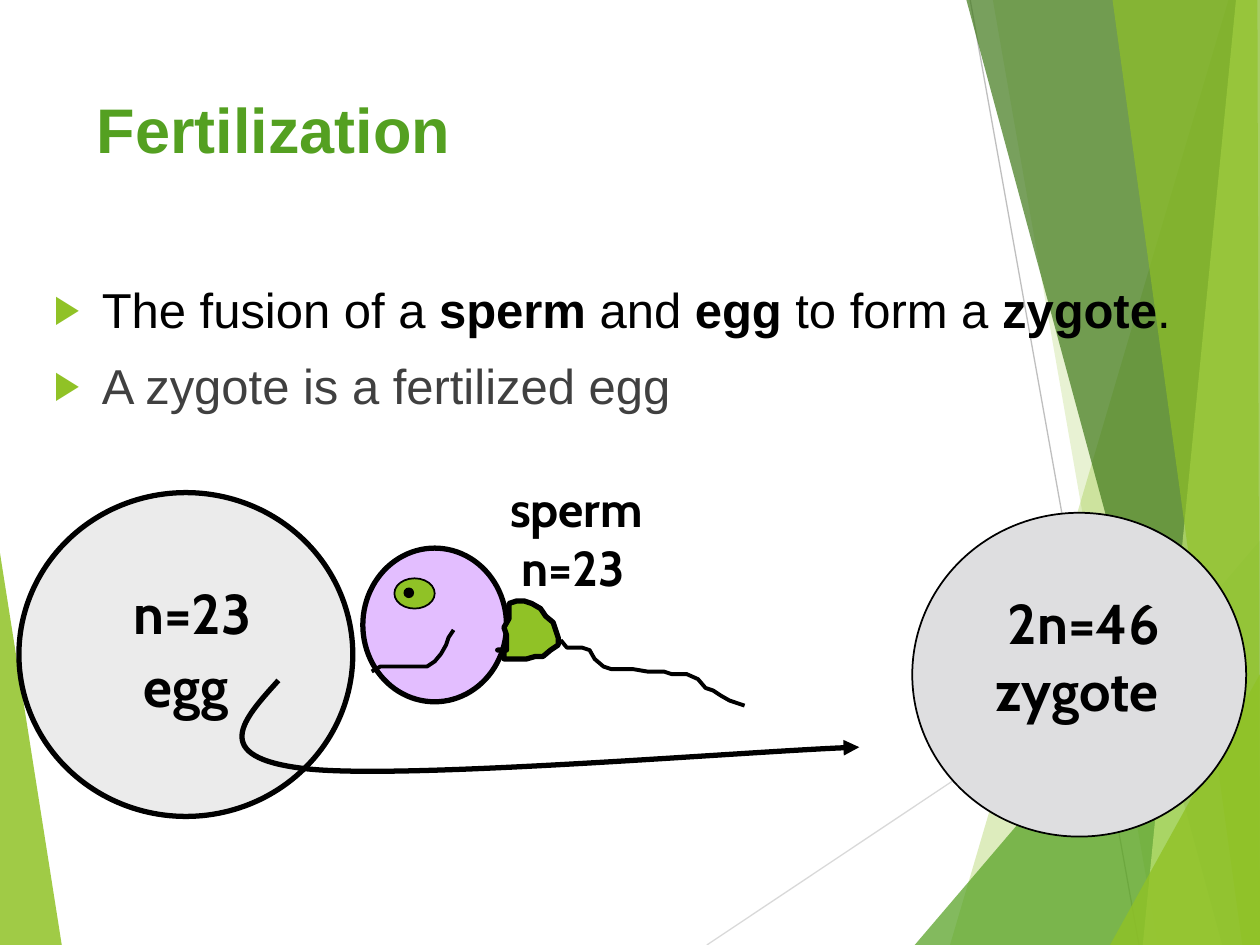
from lxml.etree import SubElement
from pptx import Presentation
from pptx.dml.color import RGBColor
from pptx.enum.shapes import MSO_CONNECTOR, MSO_SHAPE
from pptx.oxml.ns import qn
from pptx.util import Inches, Pt

W, H = 10, 7.5
COLORS = {
    "lime": "90C226", "green": "54A021", "forest": "3F7819", "pale": "C0E474",
    "rule": "D9D9D9", "rule dark": "BFBFBF", "black": "000000", "grey": "404040",
    "egg": "EBEBEB", "sperm": "E3BEFF", "zygote": "DEDEE0",
}

# Backdrop: colour, opacity in percent, corners
LEFT_WEDGE = ("lime", 85, [(0, 4.39), (0.49, H), (0, H)])
RULES = [("rule", (5.61, H), (W, 4.57)), ("rule dark", (7.7, 0), (9.04, H))]
RIGHT_BANDS = [
    ("lime", 30, [(9.75, 0), (7.54, H), (W, H), (W, 0)]),
    ("lime", 20, [(7.88, 0), (9.19, H), (W, H), (W, 0)]),
    ("green", 72, [(7.26, H), (W, 4.29), (W, H)]),
    ("forest", 70, [(7.67, 0), (9.7, H), (W, H), (W, 0)]),
    ("pale", 70, [(9.81, 0), (9.07, H), (W, H), (W, 0)]),
    ("lime", 65, [(8.83, 0), (9.86, H), (W, H), (9.98, 0)]),
    ("lime", 80, [(8.81, H), (W, 5.35), (W, H)]),
]

# Text: runs are (words, bold)
TITLE = [("Fertilization", True)]
BULLETS = [
    ("black", [("The fusion of a ", False), ("sperm", True), (" and ", False),
               ("egg", True), (" to form a ", False), ("zygote", True), (".", False)]),
    ("grey", [("A zygote is a fertilized egg", False)]),
]

# Cells: box, fill, line width
EGG = ((0.15, 3.91, 2.65, 2.57), "egg", 3)
SPERM_HEAD = ((2.88, 4.35, 1.14, 1.22), "sperm", 3)
EYE = ((3.13, 4.59, 0.32, 0.24), "lime", 1)
PUPIL = ((3.21, 4.67, 0.07, 0.07), "black", 1)
ZYGOTE = ((7.24, 4.07, 2.65, 2.57), "zygote", 1)

# Labels: box, size, lines, fill
EGG_LABELS = [((0.96, 4.54, 1.22, 0.63), 32, ["n=23"], "egg"),
              ((1.04, 5.12, 0.99, 0.63), 32, ["egg"], "egg")]
SPERM_LABEL = ((3.95, 3.75, 1.37, 1.03), 28, ["sperm", " n=23"], None)
ZYGOTE_LABEL = ((7.8, 4.62, 1.6, 1.16), 32, [" 2n=46", "zygote"], None)

# Hand-drawn outlines
MIDPIECE = [
    (3.95, 5.16), (4.02, 5.16), (4.02, 5.04), (4, 4.98), (4.04, 4.91), (4.04, 4.79),
    (4.1, 4.77), (4.16, 4.77), (4.22, 4.79), (4.29, 4.83), (4.33, 4.89), (4.39, 4.94),
    (4.41, 5), (4.43, 5.06), (4.43, 5.12), (4.37, 5.16), (4.31, 5.21), (4.25, 5.21),
    (4.18, 5.23), (4, 5.23), (4, 5.16)]
TAIL = [
    (4.45, 5.08), (4.5, 5.14), (4.62, 5.14), (4.68, 5.16), (4.72, 5.23), (4.79, 5.29),
    (4.85, 5.31), (5.02, 5.31), (5.14, 5.33), (5.27, 5.33), (5.33, 5.35), (5.45, 5.35),
    (5.54, 5.39), (5.6, 5.46), (5.66, 5.48), (5.72, 5.52), (5.79, 5.56), (5.85, 5.58),
    (5.91, 5.6)]
MOUTH = [(2.95, 5.33), (3.02, 5.29), (3.39, 5.29), (3.45, 5.25), (3.5, 5.19),
         (3.54, 5.12), (3.56, 5.06), (3.6, 5)]
ARROW = [(2.21, 5.4), (1.93, 5.71), (1.65, 6.01), (2.42, 6.1),
         (3.19, 6.19), (6.08, 5.95), (6.82, 5.93)]

prs = Presentation()
prs.slide_width, prs.slide_height = Inches(W), Inches(H)
shapes = prs.slides.add_slide(prs.slide_layouts[6]).shapes


def rgb(name):
    return RGBColor.from_string(COLORS[name])


def inches(values):
    return [Inches(v) for v in values]


def paint(sp, fill=None, width=None, opacity=100):
    sp.shadow.inherit = False
    if fill:
        sp.fill.solid()
        sp.fill.fore_color.rgb = rgb(fill)
        if opacity < 100:
            color = sp.fill._xPr.find(qn("a:solidFill"))[0]
            SubElement(color, qn("a:alpha"), val=str(opacity * 1000))
    else:
        sp.fill.background()
    if width:
        sp.line.color.rgb = rgb("black")
        sp.line.width = Pt(width)
    else:
        sp.line.fill.background()


def outline(points, closed=False, **style):
    start, *rest = [inches(pt) for pt in points]
    builder = shapes.build_freeform(*start)
    builder.add_line_segments(rest, close=closed)
    sp = builder.convert_to_shape()
    paint(sp, **style)
    return sp


def curve(points, **style):
    """Turn each three points after the first into one Bezier segment."""
    sp = outline(points, **style)
    path = next(sp._element.iter(qn("a:path")))
    steps = path.findall(qn("a:lnTo"))
    for i in range(0, len(steps), 3):
        bezier = SubElement(path, qn("a:cubicBezTo"))
        for step in steps[i:i + 3]:
            bezier.append(step[0])
            path.remove(step)
    return sp


def band(color, opacity, points):
    outline(points, closed=True, fill=color, opacity=opacity)


def ellipse(box, fill, width):
    paint(shapes.add_shape(MSO_SHAPE.OVAL, *inches(box)), fill, width)


def add_runs(p, runs, size, color, font):
    for words, bold in runs:
        r = p.add_run()
        r.text = words
        r.font.name, r.font.size, r.font.bold = font, Pt(size), bold
        r.font.color.rgb = rgb(color)


def text_box(box, paragraphs, size, font, wrap=True):
    sp = shapes.add_textbox(*inches(box))
    tf = sp.text_frame
    tf.word_wrap = wrap
    for i, (color, runs) in enumerate(paragraphs):
        p = tf.add_paragraph() if i else tf.paragraphs[0]
        add_runs(p, runs, size, color, font)
    return sp


def label(box, size, lines, fill):
    sp = text_box(box, [("black", [(line, True)]) for line in lines], size, "Cabin", False)
    if fill:
        sp.fill.solid()
        sp.fill.fore_color.rgb = rgb(fill)


def add_bullet(p):
    pPr = p._p.get_or_add_pPr()
    pPr.set("marL", str(Inches(0.38)))
    pPr.set("indent", str(-Inches(0.38)))
    SubElement(SubElement(pPr, qn("a:buClr")), qn("a:srgbClr"), val=COLORS["lime"])
    SubElement(pPr, qn("a:buSzPct"), val="80000")
    SubElement(pPr, qn("a:buFont"), typeface="Arial")
    SubElement(pPr, qn("a:buChar"), char="▶")


# Backdrop
band(*LEFT_WEDGE)
for color, start, end in RULES:
    rule = shapes.add_connector(MSO_CONNECTOR.STRAIGHT, *inches(start + end))
    rule.line.color.rgb = rgb(color)
    rule.line.width = Pt(0.75)
    SubElement(rule._element.spPr, qn("a:effectLst"))
for item in RIGHT_BANDS:
    band(*item)

# Title and bullets
text_box((0.67, 0.67, 6.94, 1.44), [("green", TITLE)], 36, "Arial")
body = text_box((0.33, 2.17, 9.25, 4.5), BULLETS, 28, "Arial")
for i, p in enumerate(body.text_frame.paragraphs):
    add_bullet(p)
    if i:
        p.space_before = Pt(10)

# Egg
ellipse(*EGG)
for item in EGG_LABELS:
    label(*item)

# Sperm
ellipse(*SPERM_HEAD)
label(*SPERM_LABEL)
outline(MIDPIECE, closed=True, fill="lime", width=3)
outline(TAIL, width=2.25)
ellipse(*EYE)
outline(MOUTH, width=2.25)
ellipse(*PUPIL)

# Zygote and the arrow to it
ellipse(*ZYGOTE)
label(*ZYGOTE_LABEL)
arrow = curve(ARROW, width=3)
SubElement(arrow.line._get_or_add_ln(), qn("a:tailEnd"), type="triangle")

prs.save("out.pptx")
